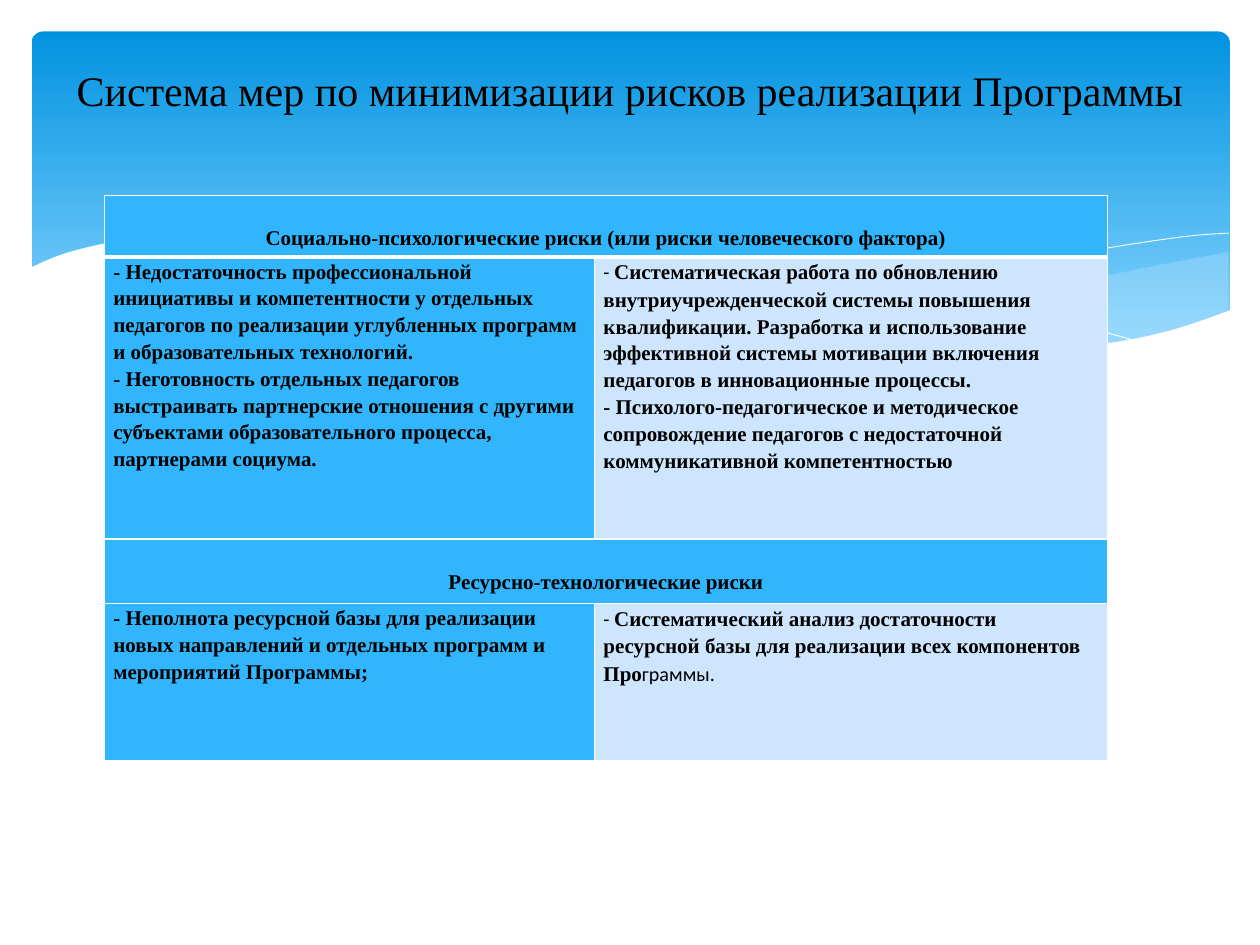
from lxml import etree
from pptx import Presentation
from pptx.dml.color import RGBColor
from pptx.enum import shapes, text
from pptx.oxml import ns
from pptx.util import Inches, Pt

HUES = {"deep": "0293E0", "pale": "83D3FE", "wave": "C6E7FC", "white": "FFFFFF",
        "black": "000000", "blue": "31B6FD", "light": "CEE5FE"}
SERIF, SANS = "Times New Roman", "Calibri"

BACK = [(9.52, .16), (8.83, .29), (8.38, .39), (7.3, .64), (6.38, .81)]
BACK_LOW = [(6.38, .81), (7.09, .9), (7.8, .94), (8.31, .92), (8.82, .85),
            (9.12, .78), (9.52, .63)]
MID = [(2.63, .07), (3.21, .01), (3.76, .03), (4.66, .12), (5.46, .27),
       (6.06, .38), (7.18, .63), (8.14, .81), (8.7, .89)]
MID_LOW = [(8.7, .89), (8.15, .94), (7.5, .93), (6.57, .84), (5.61, .71),
           (4.26, .38), (3.39, .19), (2.63, .07)]
FALL = [(2.86, .11), (3.4, .05), (3.93, .03), (4.66, .06), (5.59, .16),
        (6.42, .29), (7.37, .49), (8.08, .67), (8.84, .88)]
RISE = [(5.9, .73), (6.72, .51), (7.53, .32), (8.43, .15), (9.15, .04), (9.52, .01)]
FRONT = [(9.54, .62), (9.07, .78), (8.52, .89), (7.86, .93), (7.03, .88),
         (6.25, .78), (5.32, .61), (4.24, .36), (3.42, .18), (2.69, .06),
         (1.88, 0), (1.23, .01), (.72, .07), (.29, .17), (0, .29)]

ROWS = [
    ["Социально-психологические риски (или риски человеческого фактора)"],
    [["- Недостаточность профессиональной инициативы и компетентности у отдельных "
      "педагогов по реализации углубленных программ и образовательных технологий.",
      "- Неготовность отдельных педагогов выстраивать партнерские отношения с другими "
      "субъектами образовательного процесса, партнерами социума."],
     [[("- ", False),
       ("Систематическая работа по обновлению внутриучрежденческой системы повышения "
        "квалификации. Разработка и использование эффективной системы мотивации "
        "включения педагогов в инновационные процессы.", True)],
      "- Психолого-педагогическое и методическое сопровождение педагогов с "
      "недостаточной коммуникативной компетентностью"]],
    ["Ресурсно-технологические риски"],
    [["- Неполнота ресурсной базы для реализации новых направлений и отдельных "
      "программ и мероприятий Программы;"],
     [[("- ", False),
       ("Систематический анализ достаточности ресурсной базы для реализации всех "
        "компонентов Про", True),
       ("граммы.", False)]]],
]


def hue(name):
    return RGBColor.from_string(HUES[name])


def style(font, bold=True, size=12):
    font.name = SERIF if bold else SANS
    font.size = Pt(size if bold else 11.5)
    font.bold = bold
    font.color.rgb = hue("black")


def smooth(knots, steps=5):
    ends = [knots[0], *knots, knots[-1]]
    curve = [knots[0]]
    for a, b, c, d in zip(ends, ends[1:], ends[2:], ends[3:]):
        for t in (n / steps for n in range(1, steps + 1)):
            curve.append(tuple(
                q + t / 2 * (r - p + t * (2 * p - 5 * q + 4 * r - s
                                          + t * (3 * (q - r) + s - p)))
                for p, q, r, s in zip(a, b, c, d)))
    return curve


def wave(slide, box, points, fill=None, alpha=100):
    left, top = box[:2]
    spots = [(Inches(left + x), Inches(top + y)) for x, y in points]
    pen = slide.shapes.build_freeform(*spots[0])
    pen.add_line_segments(spots[1:], close=bool(fill))
    shape = pen.convert_to_shape()
    shape.shadow.inherit = False
    if fill:
        shape.fill.solid()
        shape.fill.fore_color.rgb = hue(fill)
        shape.line.fill.background()
        tint = shape.fill._xPr.find(".//" + ns.qn("a:srgbClr"))
        etree.SubElement(tint, ns.qn("a:alpha"), val=str(alpha * 1000))
    else:
        shape.fill.background()
        shape.line.color.rgb = hue("white")
        shape.line.width = Pt(0.5)


def banner(slide, box):
    panel = slide.shapes.add_shape(shapes.MSO_SHAPE.ROUNDED_RECTANGLE, *map(Inches, box))
    panel.adjustments[0] = 0.034
    panel.shadow.inherit = False
    panel.line.fill.background()
    panel.fill.gradient()
    panel.fill.gradient_angle = 270
    for stop, name, place in zip(panel.fill.gradient_stops, ("deep", "pale"), (0, 0.9)):
        stop.color.rgb = hue(name)
        stop.position = place


def waves(slide, box):
    wide, high = box[2:]
    wave(slide, box, smooth(BACK) + smooth(BACK_LOW), "wave", 29)
    wave(slide, box, smooth(MID) + smooth(MID_LOW), "wave", 40)
    wave(slide, box, smooth(FALL))
    wave(slide, box, smooth(RISE))
    wave(slide, box, smooth(FRONT) + [(0, high), (wide, high)], "white")


def title(slide, box):
    frame = slide.shapes.add_textbox(*map(Inches, box)).text_frame
    frame.word_wrap = True
    frame.margin_left = frame.margin_right = Inches(0.05)
    frame.margin_top = Inches(0.14)
    para = frame.paragraphs[0]
    para.text = "Система мер по минимизации рисков реализации Программы"
    para.alignment = text.PP_ALIGN.CENTER
    style(para.font, size=24)
    para.font.bold = False


def border(cell, top, bottom):
    props = cell._tc.get_or_add_tcPr()
    for spot, (side, width) in enumerate(zip("LRTB", (1, 1, top, bottom))):
        line = etree.Element(ns.qn("a:ln" + side), w=str(Pt(width)))
        fill = etree.SubElement(line, ns.qn("a:solidFill"))
        etree.SubElement(fill, ns.qn("a:srgbClr"), val=HUES["white"])
        props.insert(spot, line)


def write(cell, paras, head):
    cell.margin_left = cell.margin_right = Inches(0.07)
    cell.margin_top = Inches(0.22 if head else 0)
    cell.margin_bottom = 0
    frame = cell.text_frame
    for spot, part in enumerate(paras):
        para = frame.add_paragraph() if spot else frame.paragraphs[0]
        para.line_spacing = 1.15
        para.alignment = text.PP_ALIGN.CENTER if head else text.PP_ALIGN.LEFT
        if isinstance(part, str):
            para.text = part
            style(para.font)
            continue
        for words, bold in part:
            run = para.add_run()
            run.text = words
            style(run.font, bold)


def risks(slide, box):
    table = slide.shapes.add_table(len(ROWS), 2, *map(Inches, box)).table
    for column, width in zip(table.columns, (3.89, 4.07)):
        column.width = Inches(width)
    for row, height in zip(table.rows, (0.49, 2.24, 0.51, 1.25)):
        row.height = Inches(height)
    for r, parts in enumerate(ROWS):
        head = len(parts) == 1
        for c in range(2):
            cell = table.cell(r, c)
            cell.fill.solid()
            cell.fill.fore_color.rgb = hue("blue" if head or c == 0 else "light")
            border(cell, 3 if r == 1 else 1, 3 if r == 0 else 1)
        if head:
            table.cell(r, 0).merge(table.cell(r, 1))
            write(table.cell(r, 0), parts, True)
        else:
            for c, paras in enumerate(parts):
                write(table.cell(r, c), paras, False)


def main():
    deck = Presentation()
    deck.slide_width, deck.slide_height = Inches(10), Inches(7.5)
    slide = deck.slides.add_slide(deck.slide_layouts[6])
    banner(slide, (0.25, 0.25, 9.51, 2.7))
    waves(slide, (0.23, 1.84, 9.54, 1.45))
    title(slide, (0.5, 0.37, 9, 1.37))
    risks(slide, (0.83, 1.55, 7.96, 4.49))
    deck.save("out.pptx")


if __name__ == "__main__":
    main()
